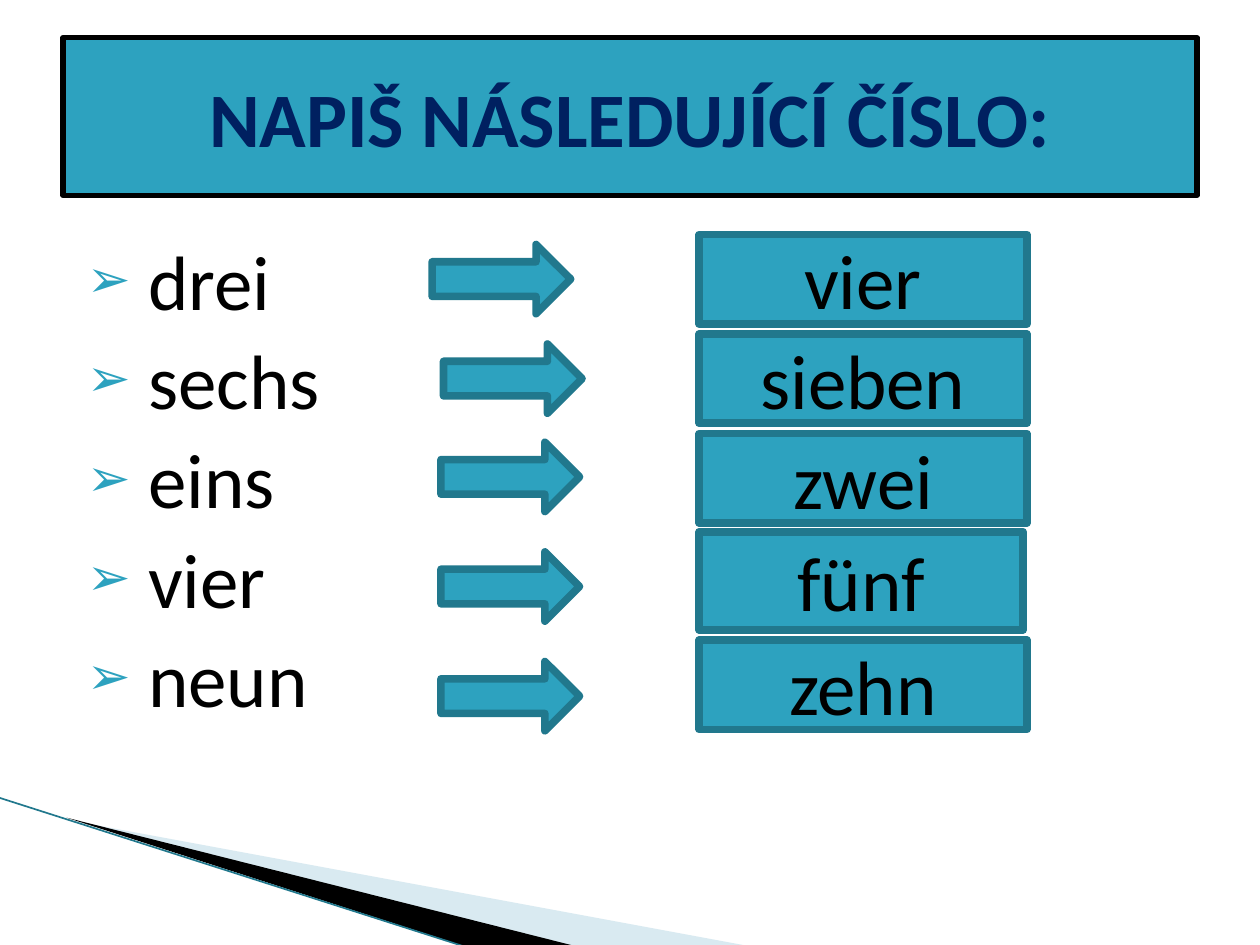
from lxml.etree import SubElement
from pptx import Presentation
from pptx.dml.color import RGBColor
from pptx.enum.shapes import MSO_CONNECTOR, MSO_SHAPE
from pptx.enum.text import MSO_ANCHOR, MSO_AUTO_SIZE, PP_ALIGN
from pptx.oxml.ns import qn
from pptx.util import Inches, Pt

COLORS = {"teal": "2DA2BF", "edge": "21788D", "pale": "A0CBDC",
          "black": "000000", "navy": "002060"}
NUMBERS = ["drei", "sechs", "eins", "vier", "neun"]
ARROWS = [(3.43, 1.94), (3.52, 2.73), (3.5, 3.51), (3.5, 4.38), (3.5, 5.25)]
ANSWERS = [("vier", 1.86, 2.6, 0.71), ("sieben", 2.65, 2.6, 0.71),
           ("zwei", 3.44, 2.6, 0.71), ("fünf", 4.22, 2.57, 0.78),
           ("zehn", 5.08, 2.6, 0.71)]


def color(name):
    """Return the named colour."""
    return RGBColor.from_string(COLORS[name])


def paint(shape, fill, line, width):
    """Give a shape a solid fill and an outline."""
    shape.fill.solid()
    shape.fill.fore_color.rgb = color(fill)
    shape.line.color.rgb = color(line)
    shape.line.width = Pt(width)


def style(para, shade="black", bold=False):
    """Set the large lettering used throughout the slide."""
    para.font.name = "Calibri"
    para.font.size = Pt(44)
    para.font.bold = bold
    para.font.color.rgb = color(shade)


def place(shape, left, top, width, height):
    """Move a shape to a box given in inches."""
    shape.left, shape.top = Inches(left), Inches(top)
    shape.width, shape.height = Inches(width), Inches(height)


def add_wedge(page, points, fill):
    """Add one filled wedge and return it."""
    builder = page.shapes.build_freeform(
        Inches(points[0][0]), Inches(points[0][1]), scale=1.0)
    builder.add_line_segments([(Inches(x), Inches(y)) for x, y in points[1:]])
    wedge = builder.convert_to_shape()
    wedge.shadow.inherit = False
    wedge.fill.solid()
    wedge.fill.fore_color.rgb = color(fill)
    wedge.line.fill.background()
    return wedge


def add_swoosh(page):
    """Draw the wedges and the thin line in the lower left corner."""
    pale = add_wedge(page, [(0.55, 6.51), (5.95, 7.51), (4.56, 7.51)], "pale")
    shade = pale.fill._xPr.find(qn("a:solidFill"))[0]
    SubElement(shade, qn("a:alpha"), val="40000")
    add_wedge(page, [(0.53, 6.49), (4.57, 7.51), (3.72, 7.52)], "black")
    edge = page.shapes.add_connector(
        MSO_CONNECTOR.STRAIGHT, Inches(-0.01), Inches(6.33),
        Inches(3.71), Inches(7.52))
    edge.line.color.rgb = color("edge")
    edge.line.width = Pt(0.95)
    SubElement(edge._element.spPr, qn("a:effectLst"))


def fill_title(title, left, top, width, height):
    """Place and format the title banner."""
    place(title, left, top, width, height)
    paint(title, "teal", "black", 3)
    frame = title.text_frame
    frame.text = "NAPIŠ NÁSLEDUJÍCÍ ČÍSLO:"
    frame.auto_size = MSO_AUTO_SIZE.NONE
    frame.vertical_anchor = MSO_ANCHOR.MIDDLE
    frame.paragraphs[0].alignment = PP_ALIGN.CENTER
    style(frame.paragraphs[0], "navy", True)


def fill_list(body, left, top, width, height):
    """Place the bulleted list of given numbers."""
    place(body, left, top, width, height)
    frame = body.text_frame
    frame.text = "\n".join(f" {number}" for number in NUMBERS)
    frame.auto_size = MSO_AUTO_SIZE.NONE
    for index, para in enumerate(frame.paragraphs):
        para.space_before = Pt(4 if index else 0)
        props = para._p.get_or_add_pPr()
        props.set("marL", str(Inches(0.4)))
        props.set("indent", str(Inches(-0.28)))
        bullet_color = SubElement(props, qn("a:buClr"))
        SubElement(bullet_color, qn("a:srgbClr"), val=COLORS["teal"])
        SubElement(props, qn("a:buSzPct"), val="68000")
        SubElement(props, qn("a:buChar"), char="➢")
        style(para)


def add_block(page, kind, left, top, width, height):
    """Add a teal preset shape with a heavy edge."""
    block = page.shapes.add_shape(kind, Inches(left), Inches(top),
                                  Inches(width), Inches(height))
    block.shadow.inherit = False
    paint(block, "teal", "edge", 4.33)
    return block


def add_answer(page, text, left, top, width, height):
    """Add one answer box."""
    box = add_block(page, MSO_SHAPE.RECTANGLE, left, top, width, height)
    frame = box.text_frame
    frame.text = text
    frame.vertical_anchor = MSO_ANCHOR.MIDDLE
    frame.paragraphs[0].alignment = PP_ALIGN.CENTER
    style(frame.paragraphs[0])


def main():
    """Build and save the slide."""
    deck = Presentation()
    deck.slide_width, deck.slide_height = Inches(10), Inches(7.5)
    page = deck.slides.add_slide(deck.slide_layouts[1])
    add_swoosh(page)
    fill_title(page.shapes.title, 0.5, 0.3, 9, 1.25)
    fill_list(page.placeholders[1], 0.47, 1.8, 8.17, 5.33)
    for left, top in ARROWS:
        add_block(page, MSO_SHAPE.RIGHT_ARROW, left, top, 1.1, 0.55)
    for text, top, width, height in ANSWERS:
        add_answer(page, text, 5.55, top, width, height)
    deck.save("out.pptx")


if __name__ == "__main__":
    main()
